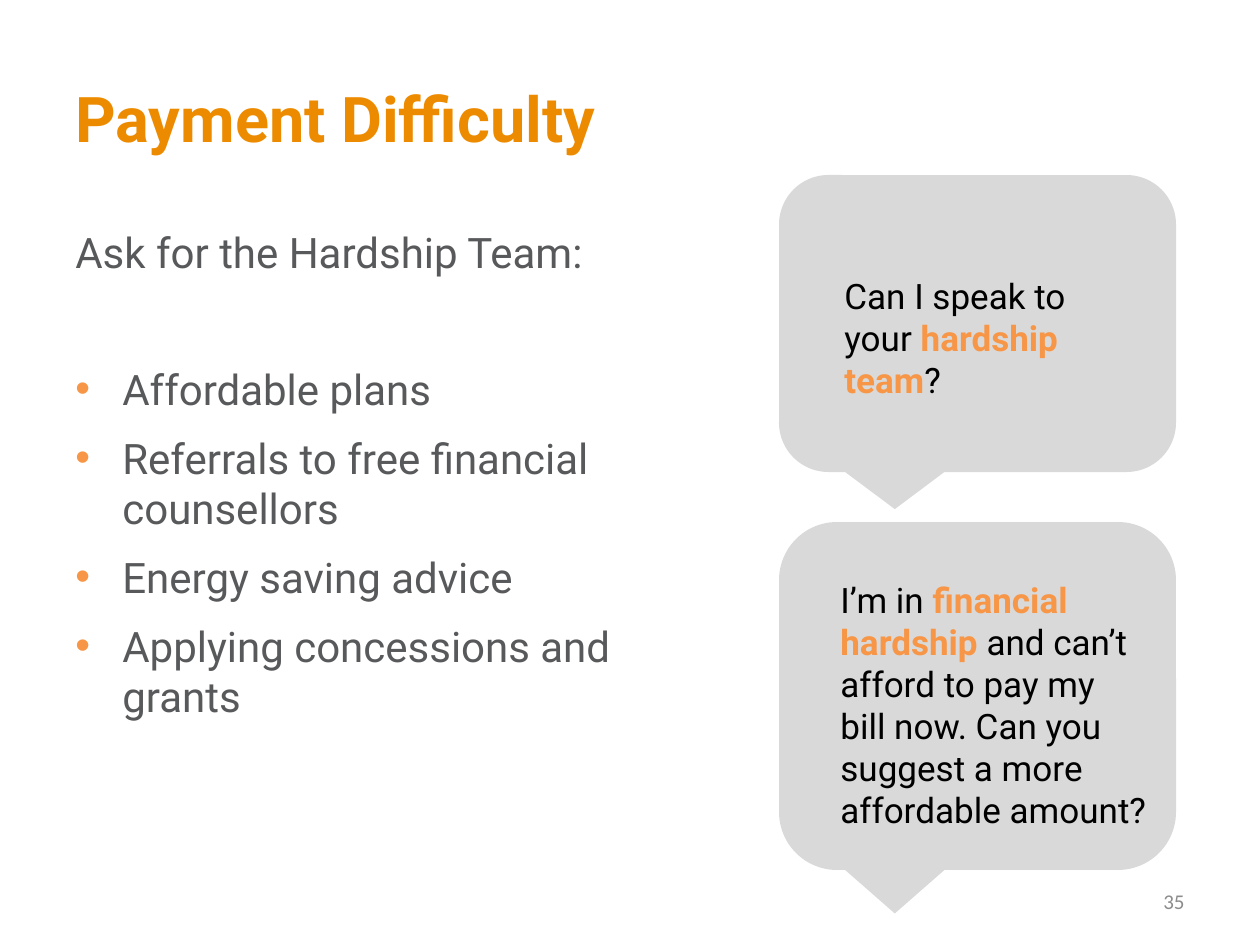
from dataclasses import dataclass

from lxml import etree
from pptx import Presentation
from pptx.dml.color import RGBColor
from pptx.enum.shapes import MSO_SHAPE
from pptx.enum.text import MSO_ANCHOR, PP_ALIGN
from pptx.oxml.ns import qn
from pptx.util import Emu, Pt

EMU_PER_PX = 914400 / 126
CALLOUT = MSO_SHAPE.ROUNDED_RECTANGULAR_CALLOUT
TOP, MIDDLE = MSO_ANCHOR.TOP, MSO_ANCHOR.MIDDLE
LEFT, RIGHT = PP_ALIGN.LEFT, PP_ALIGN.RIGHT

TITLE_ORANGE = RGBColor(0xED, 0x8B, 0x00)
ACCENT = RGBColor(0xF7, 0x96, 0x46)
BODY_GREY = RGBColor(0x58, 0x59, 0x5B)
NUMBER_GREY = RGBColor(0x8C, 0x8C, 0x8C)
BUBBLE_GREY = RGBColor(0xD9, 0xD9, 0xD9)
BLACK = RGBColor(0x00, 0x00, 0x00)


@dataclass(frozen=True)
class Box:
    left: int
    top: int
    width: int
    height: int

    def emu(self) -> list[Emu]:
        return [px(n) for n in (self.left, self.top, self.width, self.height)]


@dataclass(frozen=True)
class Style:
    size: int
    color: RGBColor
    bold: bool = False
    font: str = "Roboto"


@dataclass(frozen=True)
class Bubble:
    outline: Box
    text_box: Box
    before: str
    highlight: str
    after: str


TITLE = Style(36, TITLE_ORANGE, bold=True)
BODY = Style(24, BODY_GREY)
NUMBER = Style(12, NUMBER_GREY, font="Calibri")
SPEECH = Style(20, BLACK)
HIGHLIGHT = Style(20, ACCENT, bold=True)

BULLETS = [
    "Affordable plans",
    "Referrals to free financial counsellors",
    "Energy saving advice",
    "Applying concessions and grants",
]
BUBBLES = [
    Bubble(Box(779, 175, 397, 297), Box(832, 268, 297, 140),
           "Can I speak to your ", "hardship team", "?"),
    Bubble(Box(779, 522, 397, 348), Box(828, 572, 332, 267),
           "I’m in ", "financial hardship ",
           "and can’t afford to pay my bill now. "
           "Can you suggest a more affordable amount?"),
]


def px(length: int) -> Emu:
    return Emu(round(length * EMU_PER_PX))


def add_run(paragraph, text: str, style: Style) -> None:
    run = paragraph.add_run()
    run.text = text
    run.font.name = style.font
    run.font.size = Pt(style.size)
    run.font.bold = style.bold
    run.font.color.rgb = style.color


def add_text_frame(slide, box: Box, anchor=TOP):
    text_frame = slide.shapes.add_textbox(*box.emu()).text_frame
    text_frame.word_wrap = True
    text_frame.vertical_anchor = anchor
    return text_frame


def add_line(slide, box: Box, text: str, style: Style, alignment=LEFT) -> None:
    paragraph = add_text_frame(slide, box, MIDDLE).paragraphs[0]
    paragraph.alignment = alignment
    add_run(paragraph, text, style)


def set_bullet(paragraph, color: RGBColor, indent: int) -> None:
    properties = paragraph._p.get_or_add_pPr()
    properties.set("marL", str(px(indent)))
    properties.set("indent", str(-px(indent)))
    bullet_color = etree.SubElement(properties, qn("a:buClr"))
    etree.SubElement(bullet_color, qn("a:srgbClr"), val=str(color))
    etree.SubElement(properties, qn("a:buFont"), typeface="Arial")
    etree.SubElement(properties, qn("a:buChar"), char="•")


def add_body(slide, box: Box, heading: str, bullets: list[str]) -> None:
    text_frame = add_text_frame(slide, box)
    paragraph = text_frame.paragraphs[0]
    paragraph.space_after = Pt(45)
    add_run(paragraph, heading, BODY)
    for bullet in bullets:
        paragraph = text_frame.add_paragraph()
        paragraph.space_before = Pt(4.5)
        paragraph.space_after = Pt(6)
        set_bullet(paragraph, ACCENT, 47)
        add_run(paragraph, bullet, BODY)


def add_bubble(slide, bubble: Bubble) -> None:
    shape = slide.shapes.add_shape(CALLOUT, *bubble.outline.emu())
    shape.shadow.inherit = False
    shape.fill.solid()
    shape.fill.fore_color.rgb = BUBBLE_GREY
    shape.line.fill.background()
    paragraph = add_text_frame(slide, bubble.text_box).paragraphs[0]
    add_run(paragraph, bubble.before, SPEECH)
    add_run(paragraph, bubble.highlight, HIGHLIGHT)
    add_run(paragraph, bubble.after, SPEECH)


def main() -> None:
    presentation = Presentation()
    presentation.slide_width = px(1260)
    presentation.slide_height = px(945)
    slide = presentation.slides.add_slide(presentation.slide_layouts[6])

    # Title, list and slide number
    add_line(slide, Box(63, 38, 1134, 158), "Payment Difficulty", TITLE)
    add_body(slide, Box(63, 220, 667, 624), "Ask for the Hardship Team:", BULLETS)
    add_line(slide, Box(903, 876, 294, 50), "35", NUMBER, RIGHT)

    # Speech bubbles
    for bubble in BUBBLES:
        add_bubble(slide, bubble)

    presentation.save("out.pptx")


if __name__ == "__main__":
    main()
